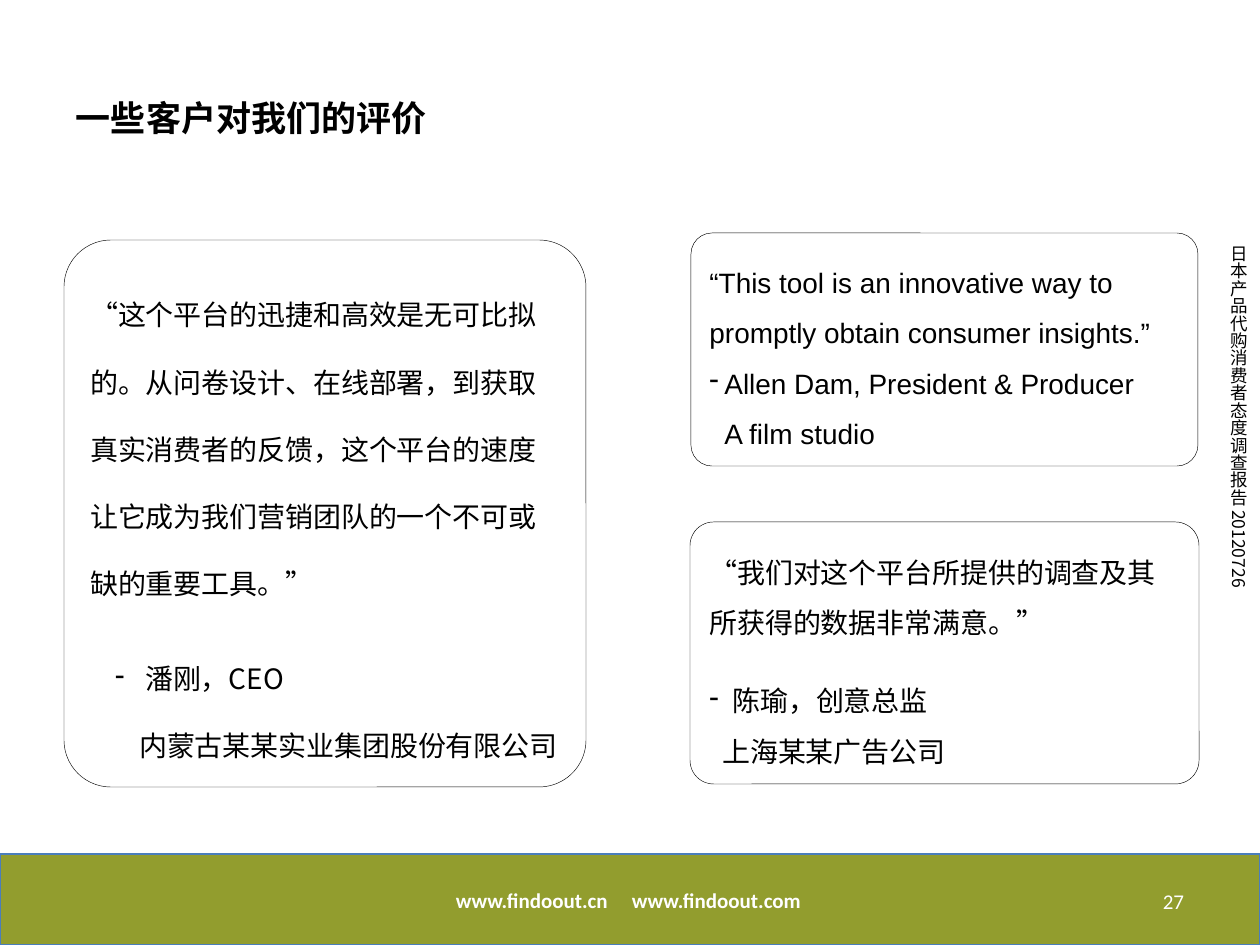
from lxml import etree
from pptx import Presentation
from pptx.dml.color import RGBColor
from pptx.enum.shapes import MSO_SHAPE
from pptx.enum.text import MSO_ANCHOR, PP_ALIGN
from pptx.oxml.ns import qn
from pptx.util import Emu, Pt

RECTANGLE = MSO_SHAPE.RECTANGLE
ROUNDED = MSO_SHAPE.ROUNDED_RECTANGLE
MIDDLE = MSO_ANCHOR.MIDDLE
LEFT, CENTER, RIGHT = PP_ALIGN.LEFT, PP_ALIGN.CENTER, PP_ALIGN.RIGHT

BLACK = RGBColor(0x00, 0x00, 0x00)
WHITE = RGBColor(0xFF, 0xFF, 0xFF)
OLIVE = RGBColor(0x92, 0x9D, 0x2E)
BLUE = RGBColor(0x4A, 0x7E, 0xBB)
CJK = "Noto Sans CJK SC"
PIXELS_PER_INCH = 126
QUOTE_SIZE = 16


def px(length):
    return Emu(round(length * 914400 / PIXELS_PER_INCH))


def format_runs(paragraph, size, name, color, bold=False):
    for run in paragraph.runs:
        font = run.font
        font.size = Pt(size)
        font.name = name
        font.bold = bold
        font.color.rgb = color
        east_asian = CJK if name == "Arial" else name
        etree.SubElement(run._r.get_or_add_rPr(), qn("a:ea"), typeface=east_asian)


def add_panel(slide, kind, box, fill, line, line_width):
    shape = slide.shapes.add_shape(kind, *map(px, box))
    shape.shadow.inherit = False
    shape.fill.solid()
    shape.fill.fore_color.rgb = fill
    shape.line.color.rgb = line
    shape.line.width = Pt(line_width)
    return shape


def add_label(slide, box, text, size, name, color, align, bold=False, inset=0):
    label = slide.shapes.add_textbox(*map(px, box))
    frame = label.text_frame
    frame.word_wrap = True
    frame.vertical_anchor = MIDDLE
    frame.margin_left = frame.margin_right = px(inset)
    frame.margin_top = frame.margin_bottom = 0
    frame.text = text
    paragraph = frame.paragraphs[0]
    paragraph.alignment = align
    format_runs(paragraph, size, name, color, bold)
    return label


def set_indent(paragraph, margin, hanging, bullet):
    properties = paragraph._p.get_or_add_pPr()
    properties.set("marL", str(px(margin)))
    properties.set("indent", str(-px(hanging)))
    if bullet:
        etree.SubElement(properties, qn("a:buChar"), char=bullet)


def add_quote(slide, box, name, spacing, gap, quote, author, company):
    card = add_panel(slide, ROUNDED, box, WHITE, BLACK, 0.25)
    card.adjustments[0] = 0.09
    frame = card.text_frame
    frame.word_wrap = True
    frame.vertical_anchor = MIDDLE
    rows = [(quote, 0, 0, None), author, company]
    for index, (text, margin, hanging, bullet) in enumerate(rows):
        paragraph = frame.paragraphs[0] if index == 0 else frame.add_paragraph()
        paragraph.text = text
        paragraph.alignment = LEFT
        paragraph.line_spacing = spacing
        paragraph.space_before = Pt(gap if index == 1 else 0)
        set_indent(paragraph, margin, hanging, bullet)
        format_runs(paragraph, QUOTE_SIZE, name, BLACK)


def add_footer(slide, box):
    left, top, width, height = box
    add_panel(slide, RECTANGLE, box, OLIVE, BLUE, 0.75)
    add_label(slide, (left + 408, top + 27, 200, 38), "www.findoout.cn",
              12, "Calibri", WHITE, RIGHT, bold=True)
    add_label(slide, (left + 632, top + 27, 200, 38), "www.findoout.com",
              12, "Calibri", WHITE, LEFT, bold=True)
    add_label(slide, (left + 904, top + 22, 293, 50), "27",
              12, "Calibri", WHITE, RIGHT, inset=13)


def add_side_note(slide, box):
    note = add_label(slide, box, "日本产品代购消费者态度调查报告 20120726",
                     10, CJK, BLACK, CENTER)
    note.text_frame._txBody.bodyPr.set("vert", "eaVert")


def build_slide(slide):
    add_footer(slide, (0, 854, 1260, 91))
    add_side_note(slide, (1223, 245, 32, 414))
    add_quote(slide, (64, 240, 522, 547), CJK, 2.0, QUOTE_SIZE,
              "“这个平台的迅捷和高效是无可比拟的。从问卷设计、在线部署，到获取真实消费者的反馈，"
              "这个平台的速度让它成为我们营销团队的一个不可或缺的重要工具。”",
              ("潘刚，CEO", 55, 30, "-"),
              ("内蒙古某某实业集团股份有限公司", 49, 0, None))
    add_quote(slide, (691, 233, 507, 233), "Arial", 1.5, 0,
              "“This tool is an innovative way to promptly obtain consumer insights.”",
              ("Allen Dam, President & Producer", 15, 15, "-"),
              ("A film studio", 15, 0, None))
    add_quote(slide, (690, 522, 509, 262), CJK, 1.5, QUOTE_SIZE,
              "“我们对这个平台所提供的调查及其所获得的数据非常满意。”",
              ("陈瑜，创意总监", 23, 23, "-"),
              ("上海某某广告公司", 13, 0, None))
    add_label(slide, (63, 38, 1134, 158), "一些客户对我们的评价",
              20, "Arial", BLACK, LEFT, bold=True, inset=13)


def main():
    presentation = Presentation()
    presentation.slide_width = px(1260)
    presentation.slide_height = px(945)
    build_slide(presentation.slides.add_slide(presentation.slide_layouts[6]))
    presentation.save("out.pptx")


if __name__ == "__main__":
    main()
